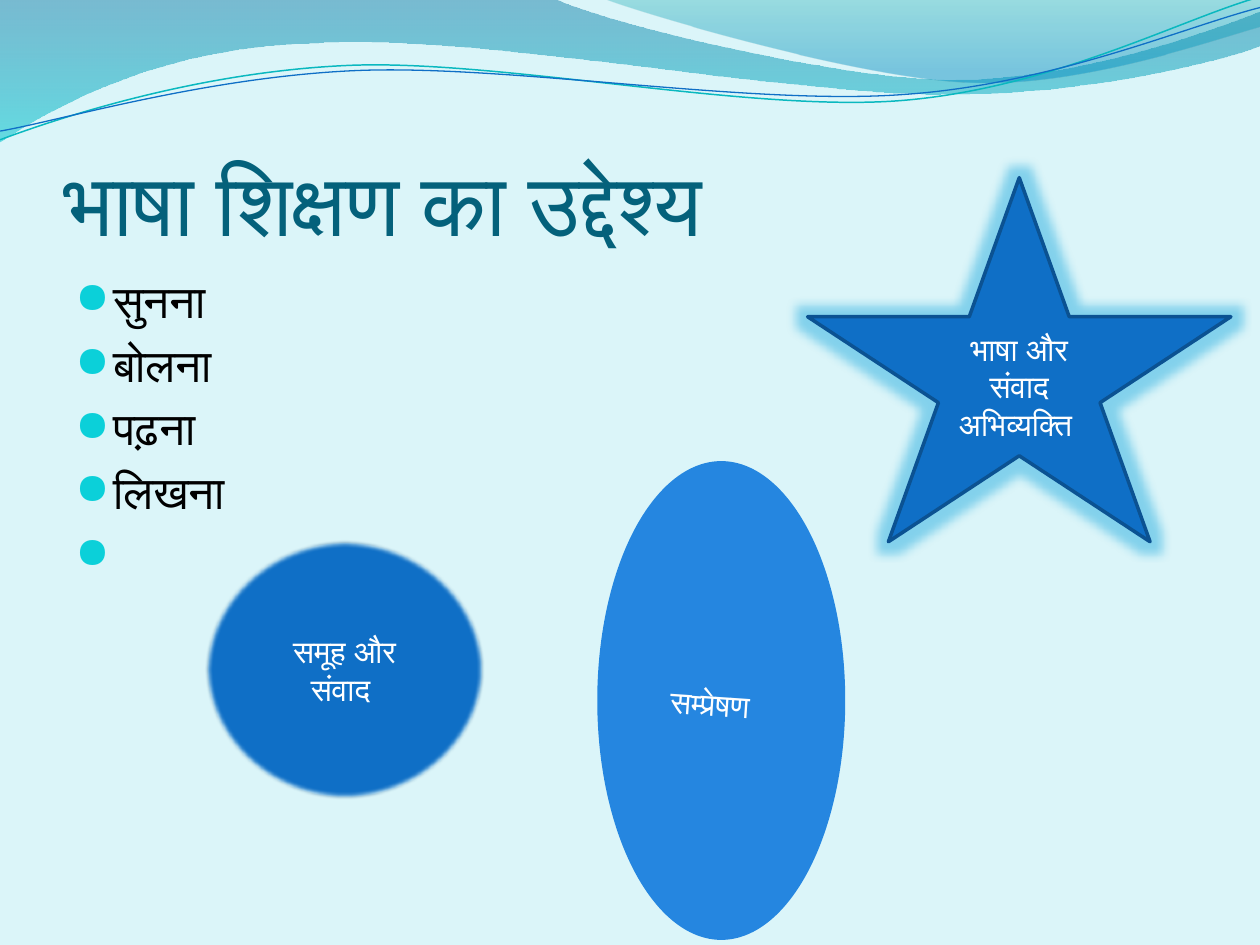
from lxml import etree
from pptx import Presentation
from pptx.dml.color import RGBColor
from pptx.enum import shapes, text
from pptx.oxml import ns
from pptx.util import Pt


def paint(item, code):
    item.rgb = RGBColor.from_string(code)


def trace(start, parts, shut):
    pts = [part[i:i + 2] for part in parts for i in range(0, len(part), 2)]
    form = slide.shapes.build_freeform(Pt(start[0]), Pt(start[1]), scale=1.0)
    form.add_line_segments([(Pt(x), Pt(y)) for x, y in pts], close=shut)
    shape = form.convert_to_shape()
    shape.shadow.inherit = False
    steps = iter(list(shape._element.spPr.iter(ns.qn("a:lnTo"))))
    for part in parts:
        first = next(steps)
        if len(part) == 6:
            bend = etree.Element(ns.qn("a:cubicBezTo"))
            first.addprevious(bend)
            for step in (first, next(steps), next(steps)):
                bend.append(step[0])
                step.getparent().remove(step)
    return shape


prs = Presentation()
prs.slide_width, prs.slide_height = Pt(720), Pt(540)
slide = prs.slides.add_slide(prs.slide_layouts[5])
slide.background.fill.solid()
paint(slide.background.fill.fore_color, "DBF5F9")

waves = [
    ((0, 0),
     [(316.8, -0.7), (342.7, 12.2, 478.1, 45.4, 545.8, 45.4),
      (614.2, 45.4, 689.8, 18.7, 720, 6.5), (720.7, 25.9),
      (707.8, 31.7, 626.4, 54.7, 537.1, 54), (447.8, 54, 275, 20.2, 185, 24.5),
      (92.9, 25.9, 33.1, 59.8, -0.7, 81.4)],
     [(0, "0074A1", 45), (1, "00C6CF", 55)]),
    ((344.9, -0.7),
     [(366.5, 7.9, 491, 44.6, 553.7, 46.8), (616.3, 49.7, 691.9, 23, 720, 15.1), (720, 0)],
     [(0, "00A1A9", 30), (0.8, "008BBF", 45)]),
]
for start, parts, stops in waves:
    wave = trace(start, parts, True)
    wave.line.fill.background()
    wave.fill.gradient()
    wave.fill.gradient_angle = 270
    for stop, (pos, code, alpha) in zip(wave.fill.gradient_stops, stops):
        stop.position = pos
        paint(stop.color, code)
    for tag, (pos, code, alpha) in zip(wave._element.spPr.iter(ns.qn("a:srgbClr")), stops):
        etree.SubElement(tag, ns.qn("a:alpha"), val=str(alpha * 1000))

curves = [
    ((0, 79.9),
     [(34.6, 67, 113.8, 41, 199.4, 37.4), (284.4, 33.8, 427, 64.1, 513.4, 57.6),
      (599.8, 51.1, 675.4, 10.8, 718.6, -1.4)], "0AB8BF", 0.85),
    ((0, 74.9),
     [(33.8, 69.1, 118.1, 43.9, 203.8, 40.3), (290.2, 36.7, 429.8, 60.5, 516.2, 54),
      (601.9, 48.2, 677.5, 15.1, 720, 4.3)], "0F6FC6", 0.75),
]
for start, parts, code, width in curves:
    curve = trace(start, parts, False)
    curve.fill.background()
    paint(curve.line.color, code)
    curve.line.width = Pt(width)

title = slide.shapes.title
title.left, title.top, title.width, title.height = Pt(36), Pt(55.4), Pt(648), Pt(90)
frame = title.text_frame
frame.text = "भाषा शिक्षण का उद्देश्य"
frame.auto_size = text.MSO_AUTO_SIZE.NONE
frame.vertical_anchor = text.MSO_ANCHOR.BOTTOM
frame.margin_left = frame.margin_right = frame.margin_bottom = 0
frame.paragraphs[0].alignment = text.PP_ALIGN.LEFT
font = frame.paragraphs[0].runs[0].font
font.name, font.size = "Calibri", Pt(50)
paint(font.color, "04617B")

body = slide.shapes.add_textbox(Pt(36), Pt(152.6), Pt(648), Pt(345.6))
frame = body.text_frame
frame.word_wrap = True
frame.text = "\n".join(["सुनना", "बोलना", "पढ़ना", "लिखना", " "])
for para in frame.paragraphs:
    para.space_before = Pt(5.2)
    font = para.runs[0].font
    font.name, font.size = "TeX Gyre Pagella", Pt(26)
    paint(font.color, "000000")
    props = para._p.get_or_add_pPr()
    props.set("marL", str(Pt(21.6)))
    props.set("indent", str(-Pt(21.6)))
    tint = etree.SubElement(props, ns.qn("a:buClr"))
    etree.SubElement(tint, ns.qn("a:srgbClr"), val="0BD0D9")
    etree.SubElement(props, ns.qn("a:buSzPct"), val="95000")
    etree.SubElement(props, ns.qn("a:buFont"), typeface="OpenSymbol")
    etree.SubElement(props, ns.qn("a:buChar"), char="●")

kinds = shapes.MSO_SHAPE
figures = [
    ("star", kinds.STAR_5_POINT, (461.5, 101.5, 241.9, 208.1), "0F6FC6", "भाषा और संवाद अभिव्यक्ति "),
    ("disc", kinds.OVAL, (118.1, 309.6, 157.7, 146.2), "0F6FC6", "समूह और संवाद "),
    ("oval", kinds.OVAL, (341.3, 263.5, 141.7, 273.6), "2586E0", "सम्प्रेषण "),
]
for name, kind, box, code, words in figures:
    shape = slide.shapes.add_shape(kind, *map(Pt, box))
    shape.shadow.inherit = False
    shape.fill.solid()
    paint(shape.fill.fore_color, code)
    paint(shape.line.color, "0B5292")
    shape.line.width = Pt(2)
    frame = shape.text_frame
    frame.text = words
    frame.word_wrap = True
    frame.vertical_anchor = text.MSO_ANCHOR.MIDDLE
    para = frame.paragraphs[0]
    para.alignment = text.PP_ALIGN.CENTER
    font = para.runs[0].font
    font.name, font.size = "TeX Gyre Pagella", Pt(18)
    paint(font.color, "FFFFFF")
    effect = shape._element.spPr.find(ns.qn("a:effectLst"))
    if name == "star":
        glow = etree.SubElement(effect, ns.qn("a:glow"), rad=str(Pt(11)))
        tint = etree.SubElement(glow, ns.qn("a:srgbClr"), val="009DD9")
        etree.SubElement(tint, ns.qn("a:alpha"), val="40000")
    elif name == "disc":
        frame.margin_left = frame.margin_right = Pt(10)
        etree.SubElement(effect, ns.qn("a:softEdge"), rad=str(Pt(2.5)))
    else:
        shape.line.fill.background()
        frame.margin_right = Pt(15)
        frame.margin_top = Pt(8.2)
        shape._element.txBody.find(ns.qn("a:bodyPr")).set("rot", "240000")

prs.save("out.pptx")
